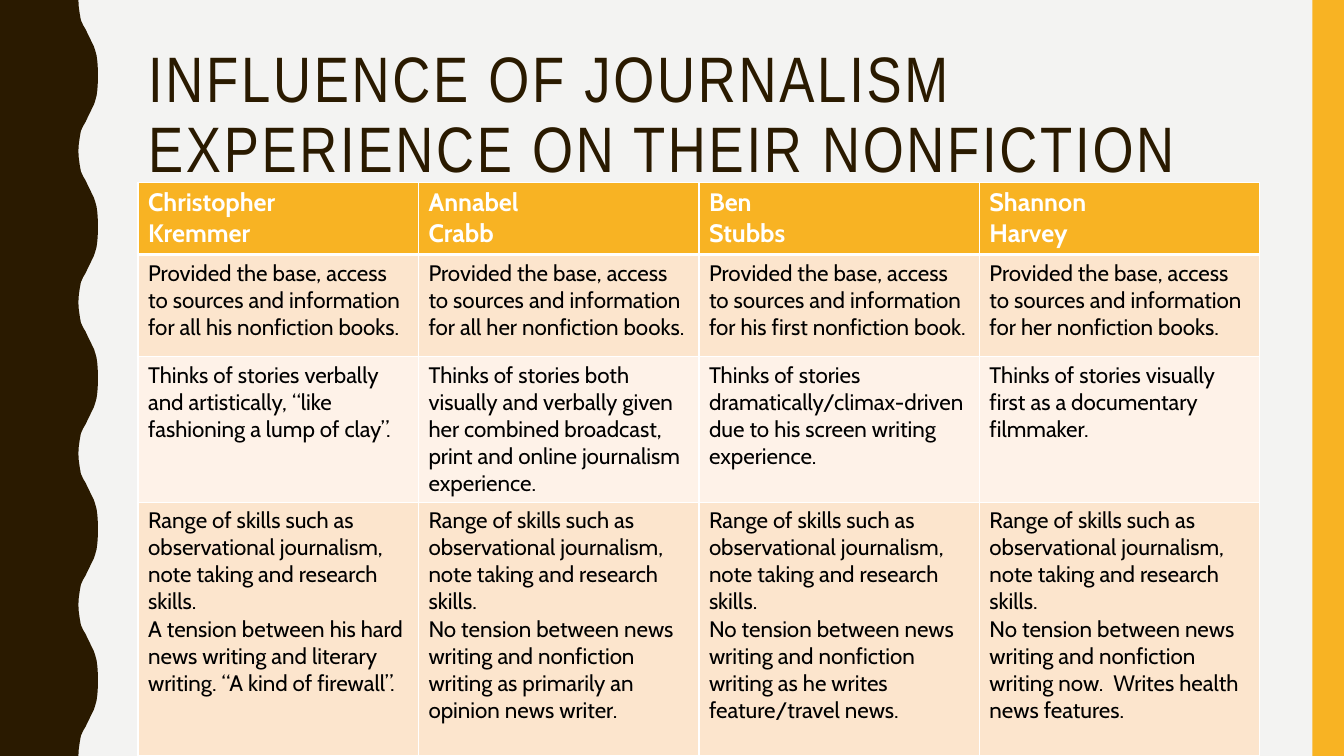
from lxml import etree
from pptx import Presentation
from pptx.dml.color import RGBColor
from pptx.enum import shapes, text
from pptx.oxml.ns import qn
from pptx.util import Pt

BROWN, GOLD, WHITE, BLACK = "2A1A00", "F8B323", "FFFFFF", "000000"
BACKGROUND, DARK_BAND, LIGHT_BAND = "F3F3F2", "FCE5CD", "FEF2E8"
WIDTH, HEIGHT = 960, 540

# Half a wave, from trough to crest: (x, y)
WAVE = [(56, 0), (56.3, 5), (57, 10), (57.8, 14.4), (59.4, 18), (61.2, 21),
        (62.6, 24), (64.1, 27), (65.5, 30), (67, 33), (68, 36),
        (69, 39.6), (69.6, 44), (69.9, 49), (70, 54)]
WAVE_LENGTH = 108

SKILLS = ("Range of skills such as observational journalism, "
          "note taking and research skills.\n")
BASE = "Provided the base, access to sources and information for "
ROWS = [
    ["Christopher\nKremmer", "Annabel\nCrabb", "Ben\nStubbs", "Shannon\nHarvey"],
    [BASE + ending for ending in (
        "all his nonfiction books.", "all her nonfiction books.",
        "his first nonfiction book.", "her nonfiction books.")],
    ["Thinks of stories " + ending for ending in (
        "verbally and artistically, “like fashioning a lump of clay”.",
        "both visually and verbally given her combined broadcast, print and "
        "online journalism experience.",
        "dramatically/climax-driven due to his screen writing experience.",
        "visually first as a documentary filmmaker.")],
    [SKILLS + ending for ending in (
        "A tension between his hard news writing and literary writing. "
        "“A kind of firewall”.",
        "No tension between news writing and nonfiction writing as primarily "
        "an opinion news writer.",
        "No tension between news writing and nonfiction writing as he writes "
        "feature/travel news.",
        "No tension between news writing and nonfiction writing now.  Writes "
        "health news features.")],
]
ROW_HEIGHTS = [51.5, 73, 104, 181.2]
ROW_FILLS = [GOLD, DARK_BAND, LIGHT_BAND, DARK_BAND]


def color(value):
    return RGBColor.from_string(value)


def paint(shape, fill):
    shape.fill.solid()
    shape.fill.fore_color.rgb = color(fill)
    shape.line.fill.background()
    shape.shadow.inherit = False


def format_run(run, font, size, fill, bold=False):
    run.font.name = font
    run.font.size = Pt(size)
    run.font.bold = bold
    run.font.color.rgb = color(fill)


def add_wavy_edge(slide):
    crest_to_trough = [(x, WAVE_LENGTH - y) for x, y in reversed(WAVE[1:-1])]
    wave = WAVE + crest_to_trough
    points = [(x, y + start) for start in range(0, HEIGHT, WAVE_LENGTH)
              for x, y in wave]
    points += [(WAVE[0][0], HEIGHT), (0, HEIGHT)]
    builder = slide.shapes.build_freeform(0, 0)
    builder.add_line_segments([(Pt(x), Pt(y)) for x, y in points], close=True)
    paint(builder.convert_to_shape(), BROWN)


def add_side_bar(slide):
    bar = slide.shapes.add_shape(shapes.MSO_SHAPE.RECTANGLE,
                                 Pt(937.5), 0, Pt(22.5), Pt(HEIGHT))
    paint(bar, GOLD)


def set_title(slide, wording):
    title = slide.shapes.title
    title.left, title.top, title.width, title.height = map(
        Pt, (98.6, 30.2, 801.4, 117.4))
    frame = title.text_frame
    frame.text = wording
    frame.word_wrap = True
    frame.auto_size = text.MSO_AUTO_SIZE.NONE
    frame.vertical_anchor = text.MSO_ANCHOR.TOP
    paragraph = frame.paragraphs[0]
    paragraph.alignment = text.PP_ALIGN.LEFT
    paragraph.line_spacing = 0.9
    run = paragraph.runs[0]
    format_run(run, "Arial Narrow", 45.9, BROWN)
    run.font._element.set("spc", "200")  # letter spacing of 2 pt


def set_borders(cell, widths):
    properties = cell._tc.get_or_add_tcPr()
    for side, width in widths.items():
        line = etree.SubElement(properties, qn("a:ln" + side), w=str(Pt(width)))
        fill = etree.SubElement(line, qn("a:solidFill"))
        etree.SubElement(fill, qn("a:srgbClr"), val=WHITE)


def fill_cell(cell, wording, fill, header):
    set_borders(cell, {"L": 1, "R": 1, "T": 1, "B": 3 if header else 1})
    cell.fill.solid()
    cell.fill.fore_color.rgb = color(fill)
    cell.text_frame.text = wording
    for paragraph in cell.text_frame.paragraphs:
        for run in paragraph.runs:
            format_run(run, "Cabin", 18 if header else 16,
                       WHITE if header else BLACK, bold=header)


def add_author_table(slide):
    table = slide.shapes.add_table(
        len(ROWS), len(ROWS[0]), Pt(98.6), Pt(130.3),
        Pt(801.4), Pt(sum(ROW_HEIGHTS))).table
    for index, (wordings, height, fill) in enumerate(
            zip(ROWS, ROW_HEIGHTS, ROW_FILLS)):
        table.rows[index].height = Pt(height)
        for column, wording in enumerate(wordings):
            fill_cell(table.cell(index, column), wording, fill,
                      header=index == 0)


def main():
    presentation = Presentation()
    presentation.slide_width, presentation.slide_height = Pt(WIDTH), Pt(HEIGHT)
    slide = presentation.slides.add_slide(presentation.slide_layouts[5])
    slide.background.fill.solid()
    slide.background.fill.fore_color.rgb = color(BACKGROUND)

    # Edge decoration
    add_wavy_edge(slide)
    add_side_bar(slide)

    # Content
    set_title(slide, "INFLUENCE OF JOURNALISM EXPERIENCE ON THEIR NONFICTION")
    add_author_table(slide)
    presentation.save("out.pptx")


if __name__ == "__main__":
    main()
